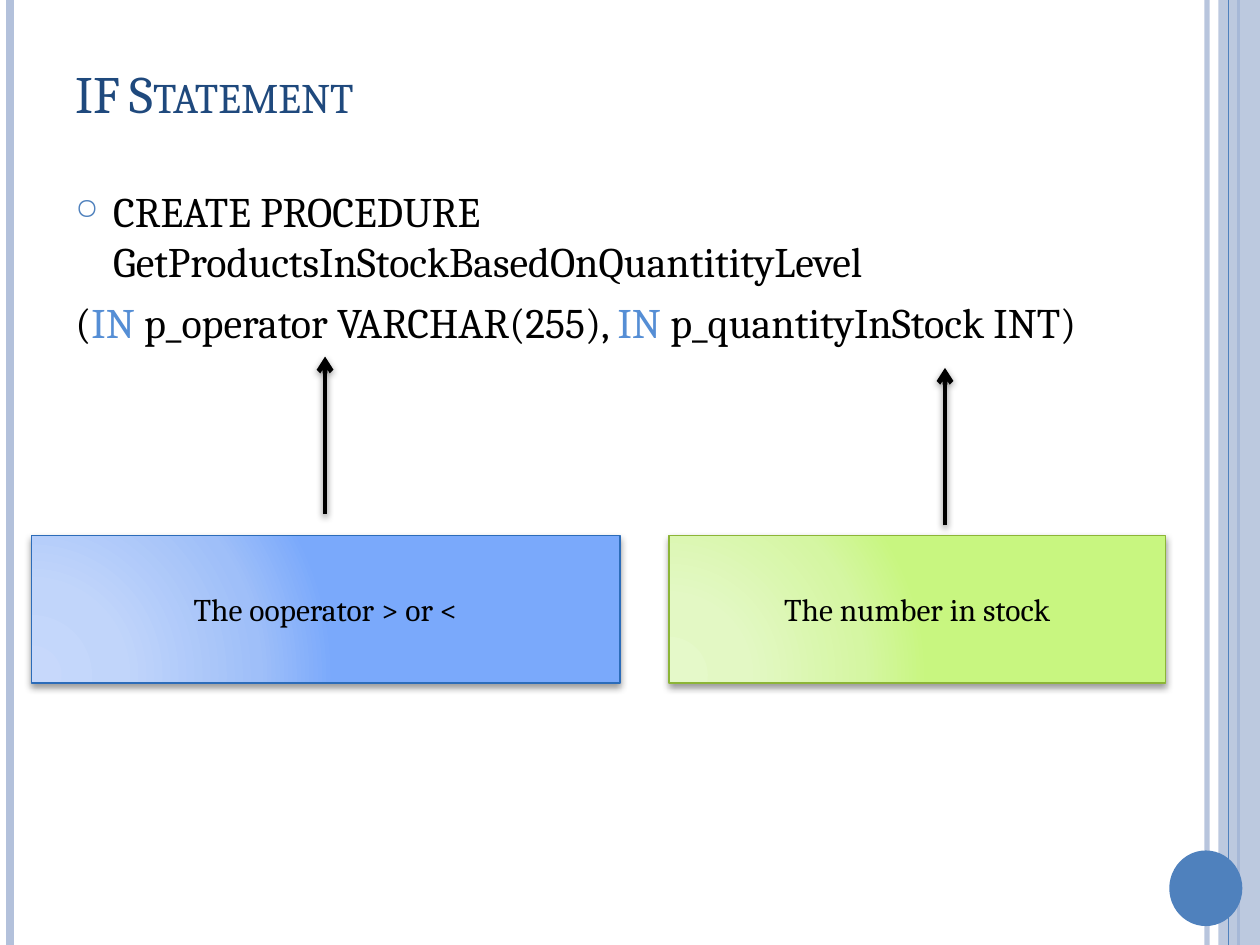
import lxml.etree
import pptx
import pptx.dml.color
import pptx.enum.shapes
import pptx.enum.text
import pptx.oxml.ns
import pptx.util

Inches = pptx.util.Inches
Pt = pptx.util.Pt
RGBColor = pptx.dml.color.RGBColor
SHAPE = pptx.enum.shapes.MSO_SHAPE
ANCHOR = pptx.enum.text.MSO_ANCHOR
ALIGN = pptx.enum.text.PP_ALIGN
qn = pptx.oxml.ns.qn

FONT = "Cambria"
BLACK = RGBColor(0x00, 0x00, 0x00)
NAVY = RGBColor(0x1F, 0x49, 0x7D)
BLUE = RGBColor(0x4F, 0x81, 0xBD)
PALE = RGBColor(0xB3, 0xC1, 0xDB)
KEYWORD = RGBColor(0x55, 0x8E, 0xD5)
BLUE_EDGE = RGBColor(0x2C, 0x6C, 0xB9)
GREEN_EDGE = RGBColor(0x8C, 0xB5, 0x37)
STOPS = (0, 30, 75, 100)
BLUES = [RGBColor.from_string(c) for c in ("C7D8FB", "C1D5FA", "9FBFF9", "7AA9FB")]
GREENS = [RGBColor.from_string(c) for c in ("E5F9C9", "E3F8C4", "D5F6A3", "C8F680")]


def add_xml(parent, tag, **attrs):
    """Append a DrawingML element and return it."""
    el = lxml.etree.SubElement(parent, qn(tag))
    for name, value in attrs.items():
        el.set(name, str(value))
    return el


def set_alpha(parent, percent):
    """Make the solid colour found under parent partly transparent."""
    color = next(parent.iter(qn("a:srgbClr")))
    add_xml(color, "a:alpha", val=percent * 1000)


def add_shadow(effects, alpha, blur, dist):
    """Put a downward black shadow into an effect list."""
    shadow = add_xml(effects, "a:outerShdw", blurRad=Pt(blur), dist=Pt(dist),
                     dir=5400000, algn="ctr", rotWithShape=0)
    color = add_xml(shadow, "a:srgbClr", val=BLACK)
    add_xml(color, "a:alpha", val=alpha * 1000)


def add_run(p, text, size=24, color=BLACK, small_caps=False):
    """Add one formatted run to a paragraph."""
    r = p.add_run()
    r.text = text
    r.font.name = FONT
    r.font.size = Pt(size)
    r.font.color.rgb = color
    if small_caps:
        r.font._element.set("cap", "small")


def add_text_box(slide, x, y, w, h, anchor=ANCHOR.TOP):
    """Add a wrapping text box and return its text frame."""
    tf = slide.shapes.add_textbox(Inches(x), Inches(y), Inches(w), Inches(h)).text_frame
    tf.word_wrap = True
    tf.vertical_anchor = anchor
    return tf


def add_shape(slide, kind, x, y, w, h, fill=None):
    """Add a flat preset shape without outline."""
    s = slide.shapes.add_shape(kind, Inches(x), Inches(y), Inches(w), Inches(h))
    s.line.fill.background()
    if fill is not None:
        s.fill.solid()
        s.fill.fore_color.rgb = fill
    s.shadow.inherit = False
    return s


def add_line(slide, x, y1, y2, color, width):
    """Add a vertical line and return it with its empty effect list."""
    s = slide.shapes.add_connector(pptx.enum.shapes.MSO_CONNECTOR.STRAIGHT,
                                   Inches(x), Inches(y1), Inches(x), Inches(y2))
    s.line.color.rgb = color
    s.line.width = Pt(width)
    return s, add_xml(s._element.spPr, "a:effectLst")


def add_frame(slide, w, h):
    """Draw the bands along the sides and the corner disc."""
    outer, _ = add_line(slide, w - 0.42, 0, h, PALE, 3)
    set_alpha(outer._element.spPr, 93)
    add_line(slide, 0.08, 0, h, PALE, 4.5)
    add_line(slide, w - 0.17, 0, h, BLUE, 1.5)
    band = add_shape(slide, SHAPE.RECTANGLE, w - 0.33, 0, 0.33, h, PALE)
    set_alpha(band._element.spPr, 87)
    add_line(slide, w - 0.25, 0, h, BLUE, 0.75)
    add_shape(slide, SHAPE.OVAL, w - 0.72, h - 0.75, 0.58, 0.6, BLUE)


def add_title(slide, x, y, w, h, text):
    """Write the slide title in small capitals."""
    tf = add_text_box(slide, x, y, w, h, ANCHOR.MIDDLE)
    add_run(tf.paragraphs[0], text, size=30, color=NAVY, small_caps=True)


def add_body(slide, x, y, w, h, heading, parameters):
    """Write the bulleted procedure name and its parameter list."""
    tf = add_text_box(slide, x, y, w, h)
    p = tf.paragraphs[0]
    p.space_before = Pt(6)
    ppr = p._p.get_or_add_pPr()
    ppr.set("marL", str(Inches(0.3)))
    ppr.set("indent", str(-Inches(0.3)))
    add_xml(add_xml(ppr, "a:buClr"), "a:srgbClr", val=BLUE)
    add_xml(ppr, "a:buSzPct", val=70000)
    add_xml(ppr, "a:buChar", char="○")
    add_run(p, heading)
    p = tf.add_paragraph()
    p.space_before = Pt(6)
    add_run(p, "(")
    for parameter in parameters:
        add_run(p, "IN ", color=KEYWORD)
        add_run(p, parameter)


def add_note(slide, x, y, w, h, text, colors, edge):
    """Add a shadowed box with a radial gradient and centred text."""
    s = add_shape(slide, SHAPE.RECTANGLE, x, y, w, h)
    s.fill.background()
    spPr = s._element.spPr
    grad = lxml.etree.Element(qn("a:gradFill"), rotWithShape="1")
    stops = add_xml(grad, "a:gsLst")
    for pos, color in zip(STOPS, colors):
        add_xml(add_xml(stops, "a:gs", pos=pos * 1000), "a:srgbClr", val=color)
    add_xml(add_xml(grad, "a:path", path="circle"), "a:fillToRect",
            l=5000, t=100000, r=120000, b=10000)
    spPr.replace(spPr.find(qn("a:noFill")), grad)
    s.line.color.rgb = edge
    s.line.width = Pt(1)
    add_shadow(spPr.find(qn("a:effectLst")), 40, 4, 2)
    tf = s.text_frame
    tf.word_wrap = True
    tf.vertical_anchor = ANCHOR.MIDDLE
    p = tf.paragraphs[0]
    p.alignment = ALIGN.CENTER
    add_run(p, text, size=18)


def add_arrow(slide, x, bottom, length):
    """Add a shadowed arrow that points up."""
    s, effects = add_line(slide, x, bottom, bottom - length, BLACK, 2.75)
    add_xml(s.line._get_or_add_ln(), "a:tailEnd", type="arrow")
    add_shadow(effects, 42, 4, 1.6)


def main():
    """Build the slide and save it."""
    prs = pptx.Presentation()
    prs.slide_width, prs.slide_height = Inches(10), Inches(7.5)
    slide = prs.slides.add_slide(prs.slide_layouts[6])
    add_frame(slide, 10, 7.5)
    add_title(slide, 0.5, 0.3, 8.67, 0.87, "IF Statement")
    add_body(slide, 0.5, 1.42, 8.67, 5.66,
             "CREATE PROCEDURE GetProductsInStockBasedOnQuantitityLevel",
             ("p_operator VARCHAR(255), ", "p_quantityInStock INT)"))
    add_note(slide, 0.25, 4.25, 4.67, 1.17, "The ooperator > or <", BLUES, BLUE_EDGE)
    add_note(slide, 5.31, 4.25, 3.94, 1.17, "The number in stock", GREENS, GREEN_EDGE)
    add_arrow(slide, 2.58, 4.08, 1.25)
    add_arrow(slide, 7.5, 4.17, 1.25)
    prs.save("out.pptx")


if __name__ == "__main__":
    main()
